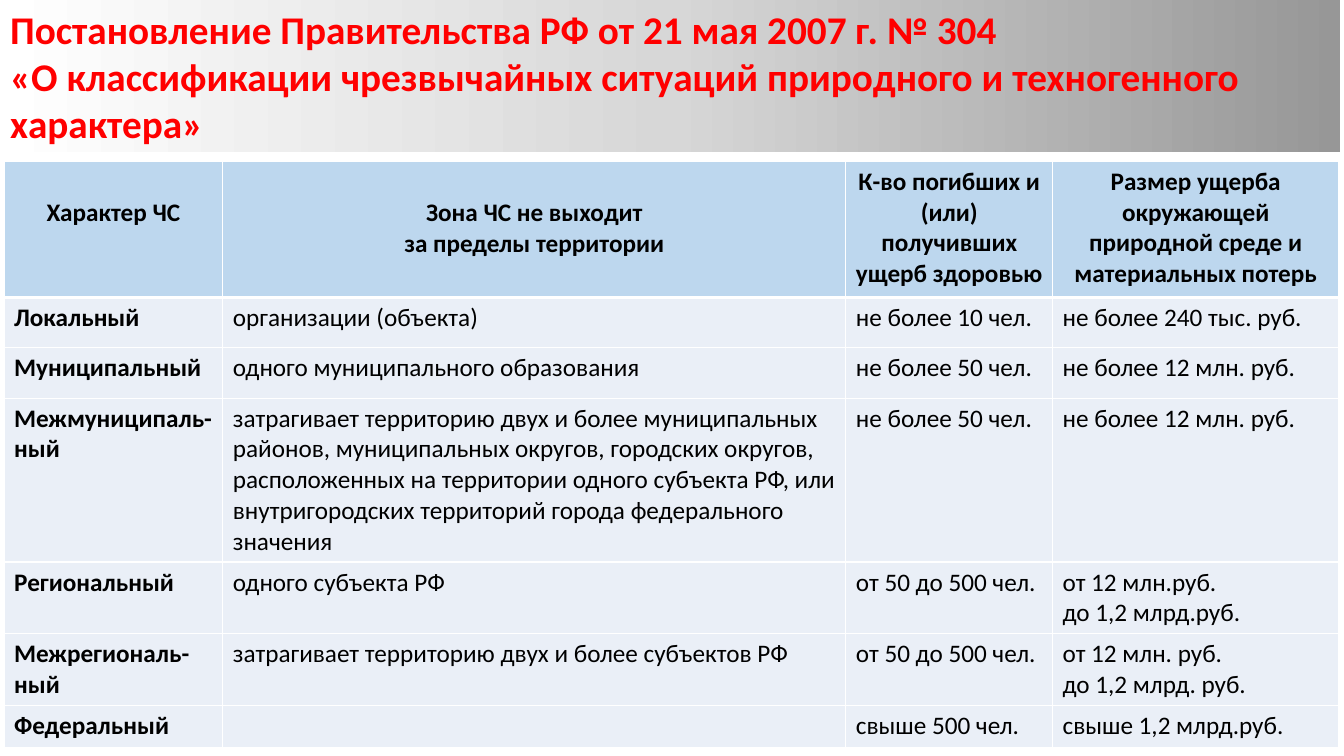
from copy import deepcopy

from lxml import etree
from pptx import Presentation
from pptx.dml.color import RGBColor
from pptx.enum.text import MSO_ANCHOR, MSO_AUTO_SIZE, PP_ALIGN
from pptx.oxml.ns import qn
from pptx.util import Emu, Pt

LEFT, CENTER = PP_ALIGN.LEFT, PP_ALIGN.CENTER
TOP = MSO_ANCHOR.TOP
NO_AUTOFIT = MSO_AUTO_SIZE.NONE
TITLE_ONLY = 5
EMU_PER_PX = 9144

TITLE = [
    "Постановление Правительства РФ от 21 мая 2007 г. № 304",
    "«О классификации чрезвычайных ситуаций природного и техногенного характера»",
]
HEADINGS = [
    "Характер ЧС",
    "Зона ЧС не выходит\nза пределы территории",
    "К-во погибших и (или) получивших ущерб здоровью",
    "Размер ущерба окружающей природной среде и материальных потерь",
]
EMERGENCIES = [
    ["Локальный", "организации (объекта)", "не более 10 чел.", "не более 240 тыс. руб."],
    ["Муниципальный", "одного муниципального образования", "не более 50 чел.",
     "не более 12 млн. руб."],
    ["Межмуниципаль-\nный",
     "затрагивает территорию двух и более муниципальных районов, муниципальных округов, "
     "городских округов, расположенных на территории одного субъекта РФ, или "
     "внутригородских территорий города федерального значения",
     "не более 50 чел.", "не более 12 млн. руб."],
    ["Региональный", "одного субъекта РФ", "от 50 до 500 чел.",
     "от 12 млн.руб.\nдо 1,2 млрд.руб."],
    ["Межрегиональ-\nный", "затрагивает территорию двух и более субъектов РФ",
     "от 50 до 500 чел.", "от 12 млн. руб.\nдо 1,2 млрд. руб."],
    ["Федеральный", "", "свыше 500 чел.", "свыше 1,2 млрд.руб."],
]
COLUMN_WIDTHS = [217, 618, 205, 284]
ROW_HEIGHTS = [135, 50, 50, 154, 66, 69, 42]
HEADING_TOP_MARGINS = [36, 36, 5, 5]
TITLE_GRADIENT = [(0, "979797"), (0.5, "D7D7D7"), (1, "FFFFFF")]


def px(length):
    """Turn whole px into EMU."""
    return Emu(length * EMU_PER_PX)


def color(hex_string):
    """Turn a hex string into a colour."""
    return RGBColor.from_string(hex_string)


def set_all(target, values):
    """Set every attribute in a dict of format values."""
    for name, value in values.items():
        setattr(target, name, value)


class SlideBuilder:
    """Holds the text style and the current slide."""

    font_name = "Calibri"
    border_color = "FFFFFF"

    def __init__(self, presentation):
        """Add a title-only slide."""
        self.slide = presentation.slides.add_slide(presentation.slide_layouts[TITLE_ONLY])

    def text(self, text_frame, lines, size, hex_color, bold, alignment):
        """Put in one paragraph per line in one format."""
        text_frame.text = "\n".join(lines)
        for paragraph in text_frame.paragraphs:
            paragraph.alignment = alignment
            for run in paragraph.runs:
                set_all(run.font, {"name": self.font_name, "size": Pt(size), "bold": bold})
                run.font.color.rgb = color(hex_color)

    def title(self, lines, left, top, width, height, gradient):
        """Place the title on a gradient band that runs right to left."""
        shape = self.slide.shapes.title
        set_all(shape, {"left": px(left), "top": px(top),
                        "width": px(width), "height": px(height)})
        shape.fill.gradient()
        shape.fill.gradient_angle = 180
        last_stop = list(shape._element.iter(qn("a:gs")))[-1]
        last_stop.addnext(deepcopy(last_stop))
        for stop, (position, hex_color) in zip(shape.fill.gradient_stops, gradient):
            stop.position = position
            stop.color.rgb = color(hex_color)
        set_all(shape.text_frame, {"word_wrap": True, "auto_size": NO_AUTOFIT,
                                   "vertical_anchor": TOP})
        self.text(shape.text_frame, lines, 28, "FF0000", True, LEFT)

    def borders(self, cell, bottom_width):
        """Draw the four borders of a cell."""
        properties = cell._tc.get_or_add_tcPr()
        for side, width in (("L", 1), ("R", 1), ("T", 1), ("B", bottom_width)):
            line = etree.SubElement(properties, qn(f"a:ln{side}"), w=str(Pt(width)))
            fill = etree.SubElement(line, qn("a:solidFill"))
            etree.SubElement(fill, qn("a:srgbClr"), val=self.border_color)

    def cell(self, cell, text, fill, bold, alignment, bottom_width, margin_top):
        """Border, fill and letter one cell."""
        self.borders(cell, bottom_width)
        cell.fill.solid()
        cell.fill.fore_color.rgb = color(fill)
        cell.margin_top = px(margin_top)
        self.text(cell.text_frame, text.split("\n"), 18, "000000", bold, alignment)

    def table(self, headings, rows, left, top):
        """Add the table with its heading row."""
        table = self.slide.shapes.add_table(
            len(ROW_HEIGHTS), len(COLUMN_WIDTHS), px(left), px(top),
            px(sum(COLUMN_WIDTHS)), px(sum(ROW_HEIGHTS))).table
        table.horz_banding = False
        for column, width in zip(table.columns, COLUMN_WIDTHS):
            column.width = px(width)
        for row, height in zip(table.rows, ROW_HEIGHTS):
            row.height = px(height)
        for index, (text, margin_top) in enumerate(zip(headings, HEADING_TOP_MARGINS)):
            self.cell(table.cell(0, index), text, "BDD7EE", True, CENTER, 3, margin_top)
        for row_index, row in enumerate(rows, 1):
            for index, text in enumerate(row):
                self.cell(table.cell(row_index, index), text, "EAEFF7",
                          index == 0, LEFT, 1, 5)


def main():
    """Build and save the slide."""
    presentation = Presentation()
    set_all(presentation, {"slide_width": px(1333), "slide_height": px(750)})
    builder = SlideBuilder(presentation)
    builder.table(HEADINGS, EMERGENCIES, 4, 160)
    builder.title(TITLE, 0, 0, 1329, 151, TITLE_GRADIENT)
    presentation.save("out.pptx")


if __name__ == "__main__":
    main()
